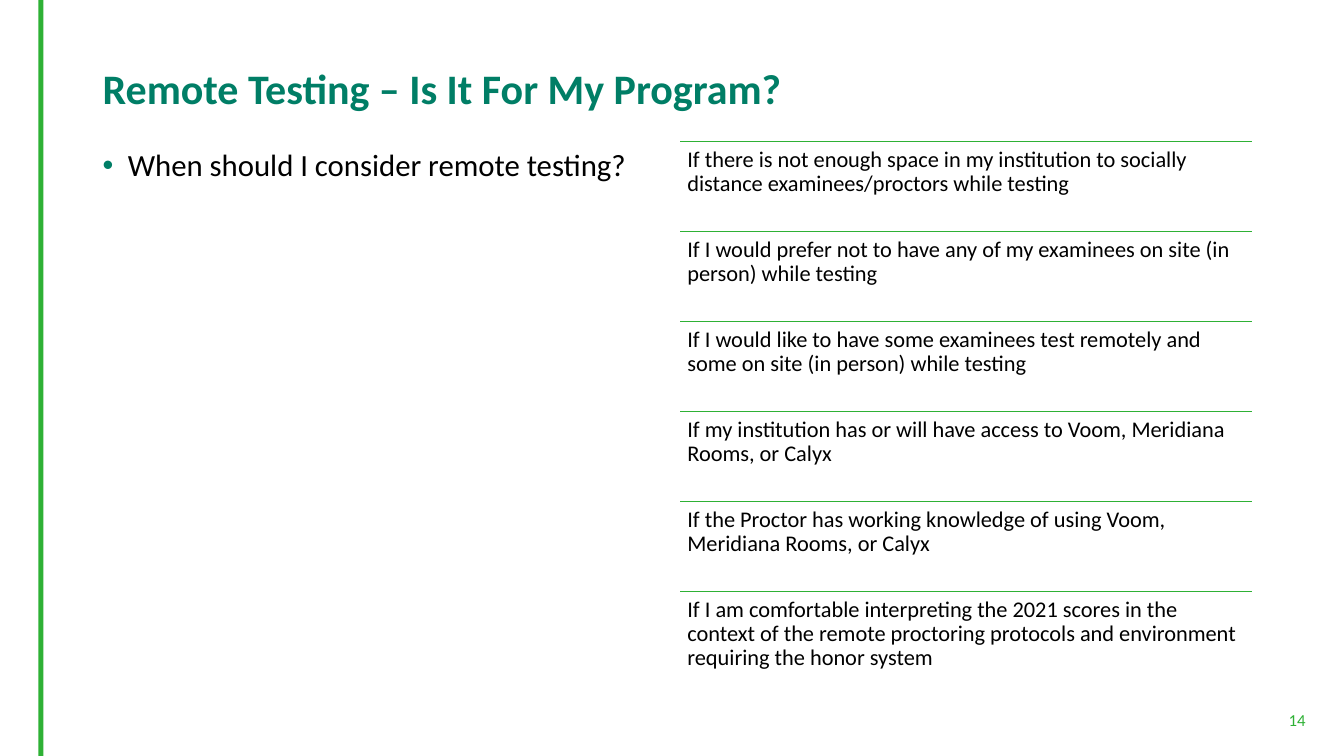
from dataclasses import dataclass

from lxml import etree
from pptx import Presentation
from pptx.dml.color import RGBColor
from pptx.enum.shapes import MSO_CONNECTOR, MSO_SHAPE
from pptx.enum.text import MSO_ANCHOR, PP_ALIGN
from pptx.oxml.ns import qn
from pptx.slide import Slide
from pptx.text.text import _Paragraph
from pptx.util import Pt

GREEN = RGBColor(0x2E, 0xB1, 0x35)
TEAL = RGBColor(0x00, 0x7E, 0x66)
BLACK = RGBColor(0x00, 0x00, 0x00)
FONT = "Calibri"
TOP, MIDDLE, BOTTOM = MSO_ANCHOR.TOP, MSO_ANCHOR.MIDDLE, MSO_ANCHOR.BOTTOM
LEFT, RIGHT = PP_ALIGN.LEFT, PP_ALIGN.RIGHT
STRAIGHT = MSO_CONNECTOR.STRAIGHT
RECTANGLE = MSO_SHAPE.RECTANGLE

PAGE_WIDTH, PAGE_HEIGHT = 960, 540
MARGIN = 66.24
CONTENT_TOP, CONTENT_HEIGHT = 100.8, 385.6
COLUMN_WIDTH = 408
REASONS_LEFT = 486
REASON_INSET = 5

REASONS = [
    "If there is not enough space in my institution to socially distance "
    "examinees/proctors while testing",
    "If I would prefer not to have any of my examinees on site (in person) "
    "while testing",
    "If I would like to have some examinees test remotely and some on site "
    "(in person) while testing",
    "If my institution has or will have access to Voom, Meridiana Rooms, or Calyx",
    "If the Proctor has working knowledge of using Voom, Meridiana Rooms, or Calyx",
    "If I am comfortable interpreting the 2021 scores in the context of the "
    "remote proctoring protocols and environment requiring the honor system",
]


@dataclass(frozen=True)
class Label:
    text: str
    left: float
    top: float
    width: float
    height: float
    size: float
    color: RGBColor = BLACK
    bold: bool = False
    anchor: MSO_ANCHOR = TOP
    align: PP_ALIGN = LEFT
    line_spacing: float = 1.0
    inset_x: float = 7.2
    inset_y: float = 3.6


def add_label(page: Slide, label: Label) -> _Paragraph:
    """Add a text box and return its only paragraph."""
    box = page.shapes.add_textbox(
        Pt(label.left), Pt(label.top), Pt(label.width), Pt(label.height)
    )
    frame = box.text_frame
    frame.word_wrap = True
    frame.vertical_anchor = label.anchor
    frame.margin_left = frame.margin_right = Pt(label.inset_x)
    frame.margin_top = frame.margin_bottom = Pt(label.inset_y)
    para = frame.paragraphs[0]
    para.alignment = label.align
    para.line_spacing = label.line_spacing
    span = para.add_run()
    span.text = label.text
    span.font.name = FONT
    span.font.size = Pt(label.size)
    span.font.bold = label.bold
    span.font.color.rgb = label.color
    return para


def add_bullet(para: _Paragraph, color: RGBColor, indent: float) -> None:
    properties = para._p.get_or_add_pPr()
    properties.set("marL", str(Pt(indent)))
    properties.set("indent", str(-Pt(indent)))
    bullet_color = etree.SubElement(properties, qn("a:buClr"))
    etree.SubElement(bullet_color, qn("a:srgbClr"), val=str(color))
    etree.SubElement(properties, qn("a:buFont"), typeface="Arial")
    etree.SubElement(properties, qn("a:buChar"), char="•")


def add_side_bar(page: Slide) -> None:
    bar = page.shapes.add_shape(RECTANGLE, Pt(27.4), Pt(0), Pt(3.6), Pt(PAGE_HEIGHT))
    bar.shadow.inherit = False
    bar.fill.solid()
    bar.fill.fore_color.rgb = GREEN
    bar.line.fill.background()


def add_rule(page: Slide, left: float, top: float, width: float) -> None:
    rule = page.shapes.add_connector(
        STRAIGHT, Pt(left), Pt(top), Pt(left + width), Pt(top)
    )
    rule.line.color.rgb = GREEN
    rule.line.width = Pt(0.5)
    etree.SubElement(rule._element.spPr, qn("a:effectLst"))


def add_reasons(page: Slide) -> None:
    """Stack the reasons in equal rows, each under a thin rule."""
    row_height = CONTENT_HEIGHT / len(REASONS)
    for index, reason in enumerate(REASONS):
        top = CONTENT_TOP + index * row_height
        add_rule(page, REASONS_LEFT, top, COLUMN_WIDTH)
        add_label(page, Label(
            reason, REASONS_LEFT, top, COLUMN_WIDTH, row_height, size=16,
            line_spacing=0.9, inset_x=REASON_INSET, inset_y=REASON_INSET,
        ))


def main() -> None:
    deck = Presentation()
    deck.slide_width, deck.slide_height = Pt(PAGE_WIDTH), Pt(PAGE_HEIGHT)
    page = deck.slides.add_slide(deck.slide_layouts[6])

    add_side_bar(page)
    add_label(page, Label(
        "Remote Testing – Is It For My Program?", MARGIN, 28.8, 828, 72,
        size=30, color=TEAL, bold=True, anchor=MIDDLE, line_spacing=0.9,
    ))
    question = add_label(page, Label(
        "When should I consider remote testing?",
        MARGIN, CONTENT_TOP, COLUMN_WIDTH, CONTENT_HEIGHT, size=22,
    ))
    add_bullet(question, TEAL, indent=18)
    add_label(page, Label(
        "14", 689, 503.3, 250.6, 21.6, size=12, color=GREEN,
        anchor=BOTTOM, align=RIGHT,
    ))
    add_reasons(page)

    deck.save("out.pptx")


if __name__ == "__main__":
    main()
